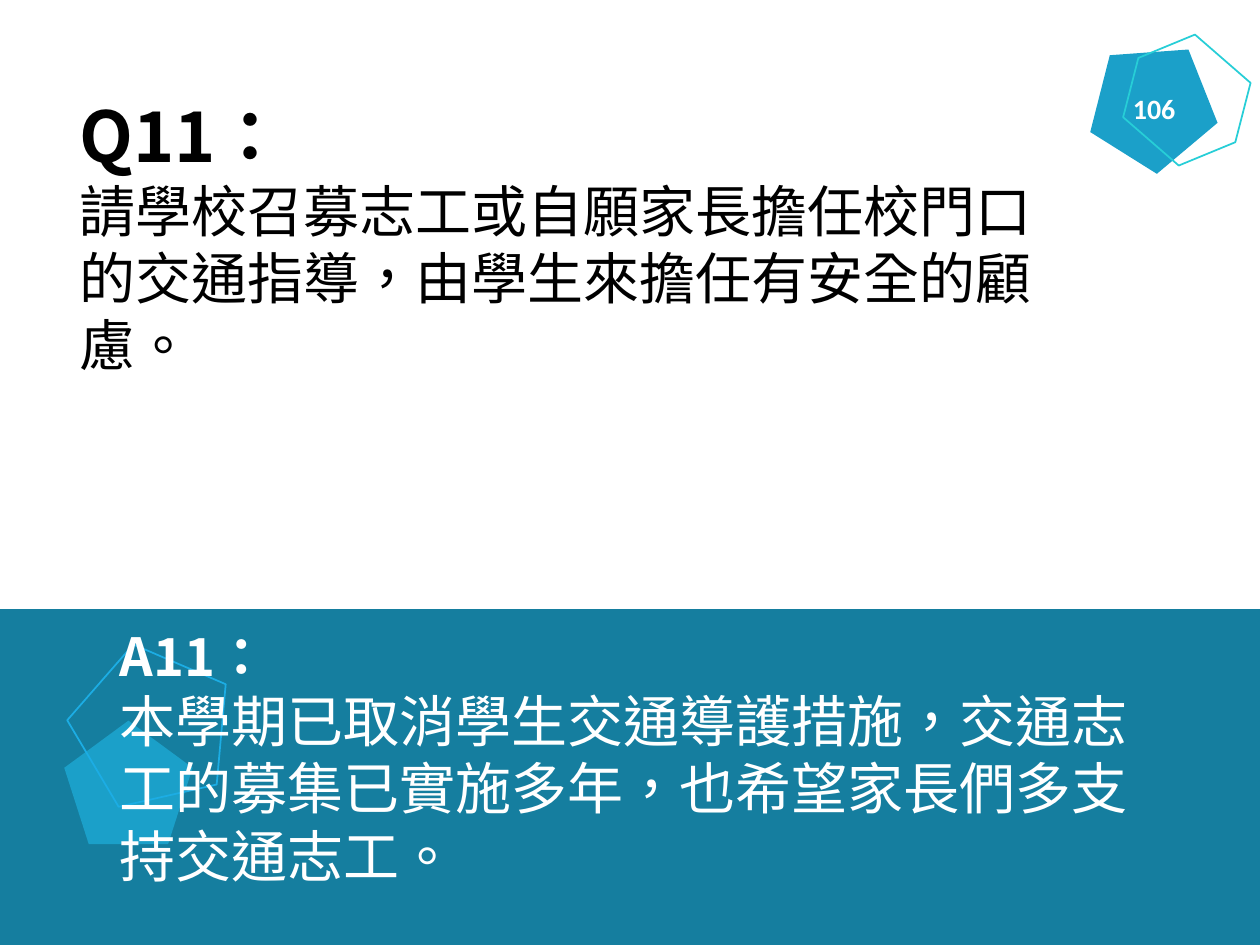
from dataclasses import dataclass

from pptx import Presentation
from pptx.dml.color import RGBColor
from pptx.enum.shapes import MSO_SHAPE
from pptx.enum.text import MSO_ANCHOR, MSO_AUTO_SIZE, PP_ALIGN
from pptx.oxml.ns import qn
from pptx.util import Pt

RECTANGLE = MSO_SHAPE.RECTANGLE
PENTAGON = MSO_SHAPE.REGULAR_PENTAGON
HEXAGON = MSO_SHAPE.HEXAGON
LEFT, CENTER = PP_ALIGN.LEFT, PP_ALIGN.CENTER
TOP = MSO_ANCHOR.TOP
GROW = MSO_AUTO_SIZE.SHAPE_TO_FIT_TEXT

COLORS = {
    "band": "157E9F",
    "solid": "1BA0C9",
    "outline": "1CADE4",
    "hexagon": "27CED7",
    "black": "000000",
    "white": "FFFFFF",
}
HEADING_FONT = "Noto Sans CJK SC"
BODY_FONT = "Calibri"


@dataclass
class Ornament:
    kind: int
    frame: tuple
    fill: str = ""
    line: str = ""
    rotation: float = 0


ORNAMENTS = [
    Ornament(RECTANGLE, (0, 348, 720, 192), fill="band"),
    Ornament(PENTAGON, (624.2, 23, 72.7, 69.8), fill="solid", rotation=32.1),
    Ornament(PENTAGON, (36.7, 411.8, 73.4, 70.6), fill="solid"),
    Ornament(PENTAGON, (39.6, 367.2, 92.9, 88.6), line="outline", rotation=347.2),
    Ornament(HEXAGON, (641.5, 25.9, 73.4, 62.6), line="hexagon", rotation=41),
]


def place(shape, frame: tuple) -> None:
    shape.left, shape.top, shape.width, shape.height = map(Pt, frame)


def draw_ornament(page, ornament: Ornament) -> None:
    shape = page.shapes.add_shape(ornament.kind, *map(Pt, ornament.frame))
    shape.shadow.inherit = False
    shape.rotation = ornament.rotation
    if ornament.fill:
        shape.fill.solid()
        shape.fill.fore_color.rgb = RGBColor.from_string(COLORS[ornament.fill])
    else:
        shape.fill.background()
    if ornament.line:
        shape.line.color.rgb = RGBColor.from_string(COLORS[ornament.line])
        shape.line.width = Pt(1)
    else:
        shape.line.fill.background()


def prepare_frame(box, wrap: bool = True) -> None:
    frame = box.text_frame
    frame.word_wrap = wrap
    frame.auto_size = GROW
    frame.vertical_anchor = TOP


def write(para, text: str, *, size: float, color: str, font: str,
          bold: bool = False, align: int = LEFT) -> None:
    para.alignment = align
    para.space_before = para.space_after = Pt(0)
    span = para.add_run()
    span.text = text
    span.font.size = Pt(size)
    span.font.bold = bold
    span.font.name = font
    span.font.color.rgb = RGBColor.from_string(COLORS[color])
    properties = span.font._element
    properties.set("lang", "zh-TW")
    east_asian = properties.makeelement(qn("a:ea"), {"typeface": font})
    properties.find(qn("a:latin")).addnext(east_asian)


def write_passage(box, heading: str, body: str, *, heading_size: float,
                  color: str) -> None:
    prepare_frame(box)
    frame = box.text_frame
    write(frame.paragraphs[0], heading, size=heading_size, color=color,
          font=HEADING_FONT, bold=True)
    write(frame.add_paragraph(), body, size=32, color=color, font=BODY_FONT)


def main() -> None:
    deck = Presentation()
    deck.slide_width, deck.slide_height = Pt(720), Pt(540)
    page = deck.slides.add_slide(deck.slide_layouts[5])
    for ornament in ORNAMENTS:
        draw_ornament(page, ornament)

    question = page.shapes.title
    place(question, (38.2, 49, 568.8, 172.1))
    write_passage(question, "Q11：",
                  "請學校召募志工或自願家長擔任校門口的交通指導，由學生來擔任有安全的顧慮。",
                  heading_size=40, color="black")

    answer = page.shapes.add_textbox(*map(Pt, (61.2, 352.8, 597.6, 159.8)))
    write_passage(answer, "A11：",
                  "本學期已取消學生交通導護措施，交通志工的募集已實施多年，也希望家長們多支持交通志工。",
                  heading_size=30, color="white")

    number = page.shapes.add_textbox(*map(Pt, (640.1, 49, 38.9, 26.6)))
    prepare_frame(number, wrap=False)
    write(number.text_frame.paragraphs[0], "106", size=16, color="white",
          font=BODY_FONT, bold=True, align=CENTER)

    deck.save("out.pptx")


if __name__ == "__main__":
    main()
